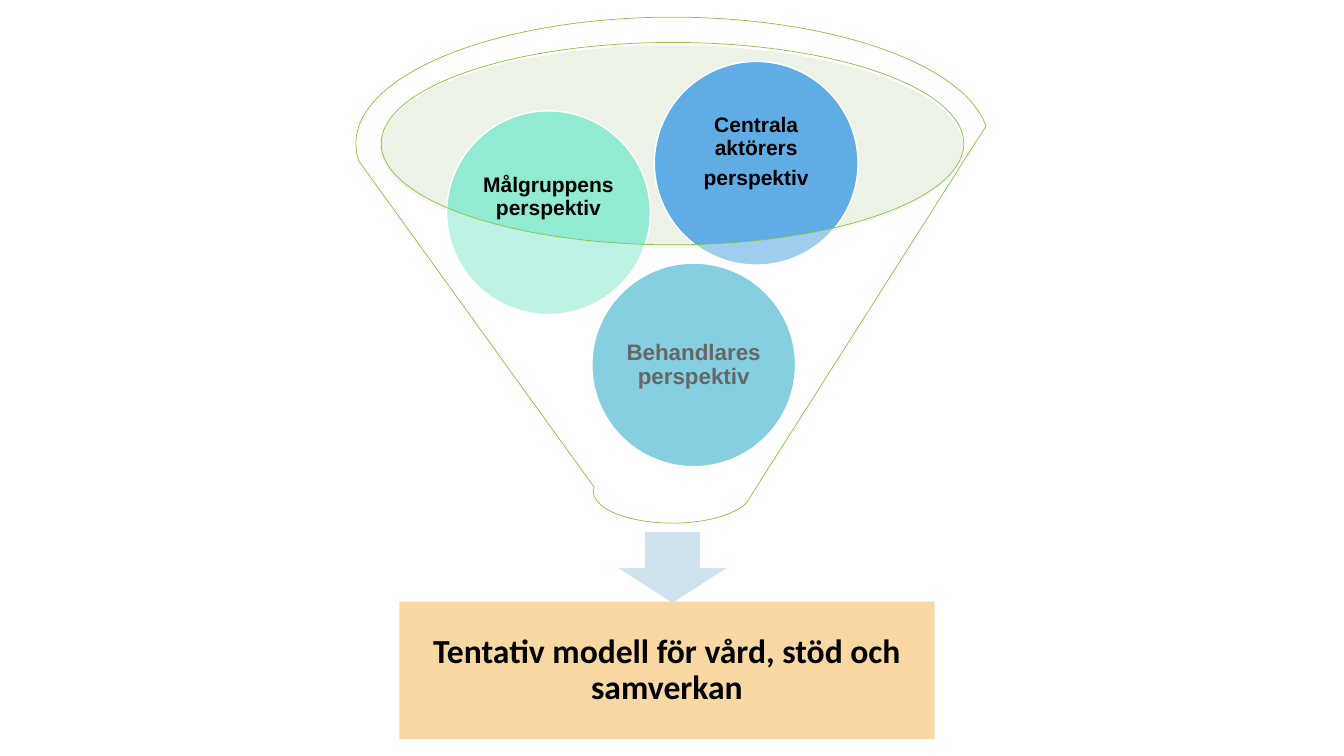
from lxml.etree import SubElement
from pptx import Presentation
from pptx.dml.color import RGBColor
from pptx.enum.shapes import MSO_SHAPE as Preset
from pptx.enum.text import MSO_ANCHOR as Anchor, PP_ALIGN as Align
from pptx.oxml.ns import qn
from pptx.util import Inches, Pt

BLACK = RGBColor(0x00, 0x00, 0x00)
WHITE = RGBColor(0xFF, 0xFF, 0xFF)
PALE_GREEN = RGBColor(0xD0, 0xE3, 0xC1)
FUNNEL_GREEN = RGBColor(0x8B, 0xC1, 0x45)
ARROW_BLUE = RGBColor(0xCE, 0xE3, 0xED)
SAND = RGBColor(0xF9, 0xD8, 0xA3)
TEAL = RGBColor(0x36, 0xAF, 0xCE)
MINT = RGBColor(0x91, 0xEA, 0xD2)
SKY = RGBColor(0x5F, 0xAD, 0xE4)

CIRCLE_SIZE = 2.02


def add_shape(page, preset, place, fill, line=None, width=1, opacity=100):
    """Add a flat preset shape with an optional outline and opacity in percent."""
    shape = page.shapes.add_shape(preset, *map(Inches, place))
    shape.shadow.inherit = False
    shape.fill.solid()
    shape.fill.fore_color.rgb = fill
    if opacity < 100:
        color = shape.fill._xPr.find(qn("a:solidFill"))[0]
        SubElement(color, qn("a:alpha"), val=str(opacity * 1000))
    if line is None:
        shape.line.fill.background()
    else:
        shape.line.color.rgb = line
        shape.line.width = Pt(width)
    return shape


def write_text(shape, paragraphs, size, font, inset, lift=0):
    """Write bold centred paragraphs, raised by extra space below them."""
    frame = shape.text_frame
    frame.word_wrap = True
    frame.vertical_anchor = Anchor.MIDDLE
    frame.margin_left = frame.margin_right = frame.margin_top = Inches(inset)
    frame.margin_bottom = Inches(inset + lift)
    for index, lines in enumerate(paragraphs):
        para = frame.paragraphs[0] if index == 0 else frame.add_paragraph()
        para.alignment = Align.CENTER
        para.line_spacing = 0.9
        para.space_after = Pt(size * 0.35)
        for number, line in enumerate(lines):
            if number:
                para.add_line_break()
            span = para.add_run()
            span.text = line
            span.font.name = font
            span.font.size = Pt(size)
            span.font.bold = True
            span.font.color.rgb = BLACK


def add_perspective(page, left, top, fill, paragraphs, size, lift=0):
    """Add one labelled circle that lies in the funnel."""
    place = (left, top, CIRCLE_SIZE, CIRCLE_SIZE)
    circle = add_shape(page, Preset.OVAL, place, fill, WHITE)
    write_text(circle, paragraphs, size, "Arial", 0.02, lift)


def main():
    """Build the funnel slide and save it."""
    deck = Presentation()
    deck.slide_width, deck.slide_height = Inches(13.33), Inches(7.5)
    page = deck.slides.add_slide(deck.slide_layouts[6])

    add_shape(page, Preset.OVAL, (3.77, 0.45, 5.78, 2.01), PALE_GREEN, opacity=40)
    add_shape(page, Preset.DOWN_ARROW, (6.11, 5.27, 1.12, 0.72), ARROW_BLUE, WHITE)
    result = add_shape(page, Preset.RECTANGLE, (3.96, 5.97, 5.31, 1.36), SAND)
    write_text(result, [["Tentativ modell för vård, stöd och samverkan"]],
               24, "Calibri", 0.19)

    add_perspective(page, 5.87, 2.61, TEAL, [["Behandlares", "perspektiv"]], 16)
    add_perspective(page, 4.43, 1.1, MINT, [["Målgruppens perspektiv"]], 15, 0.3)
    add_perspective(page, 6.49, 0.61, SKY,
                    [["Centrala aktörers"], ["perspektiv"]], 15, 0.22)

    add_shape(page, Preset.FUNNEL, (3.53, 0.17, 6.28, 5.02), WHITE,
              FUNNEL_GREEN, 0.5, 40)
    deck.save("out.pptx")


if __name__ == "__main__":
    main()
